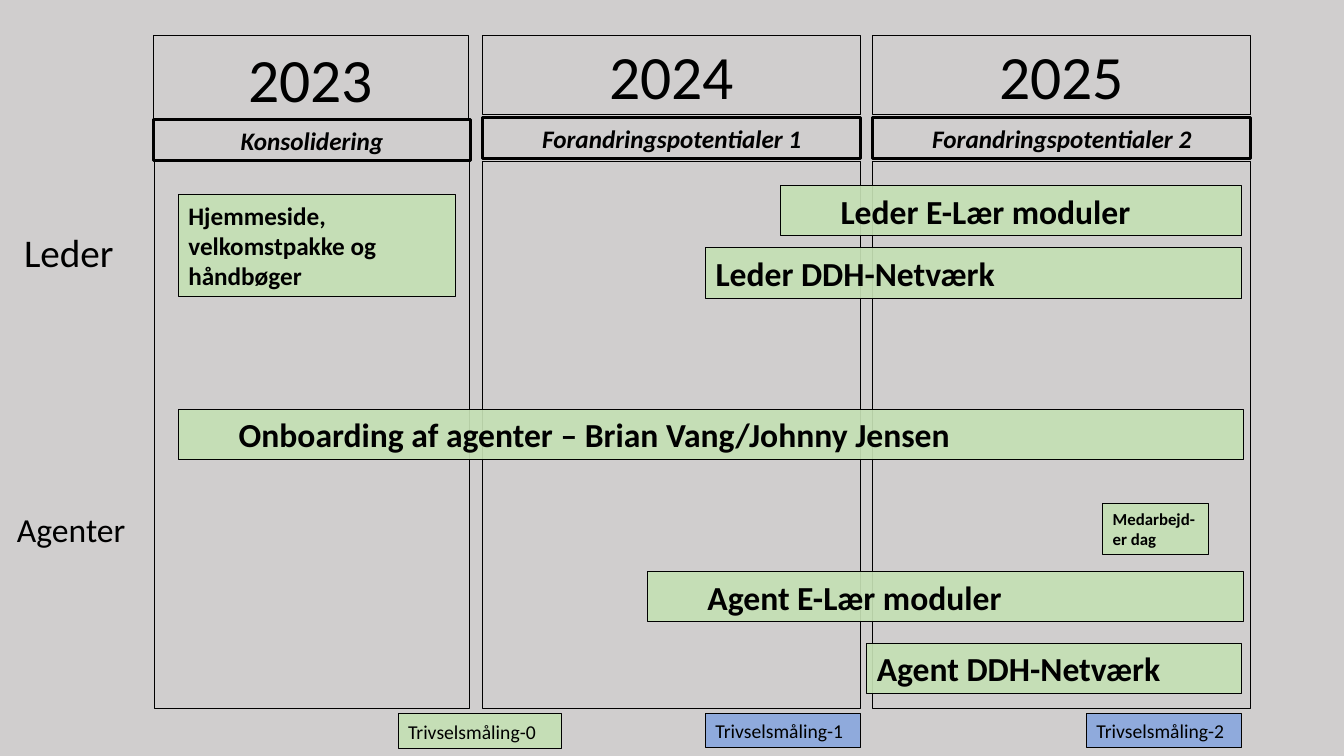
"""Draw a three-year plan for leaders and agents on a 160 by 90 grid."""
from dataclasses import dataclass
from typing import Optional

from lxml import etree
from pptx import Presentation
from pptx import util as u
from pptx.dml.color import RGBColor
from pptx.enum import shapes, text
from pptx.oxml import ns

COLS, ROWS = 160, 90
CELL = u.Inches(1 / 12)
BLACK = RGBColor(0x00, 0x00, 0x00)
GREY = RGBColor(0xD0, 0xCE, 0xCE)
GREEN = RGBColor(0xC5, 0xE0, 0xB4)
BLUE = RGBColor(0x8F, 0xAA, 0xDC)
OPAQUE = {GREEN: 92}
FONT = "Calibri"
BODY_TOP, BODY_ROWS = 19.2, 65.16
STRIP_ROWS = 4.8
BAR_ROWS = 6
FOOT_TOP = 84.96


@dataclass
class Year:
    name: str
    theme: str
    col: float
    wide: float
    head: float
    strip: float
    strip_wide: float
    body_col: float


@dataclass
class Bar:
    words: str
    col: float
    row: float
    wide: float
    high: float = BAR_ROWS
    size: int = 24
    bold: bool = True
    level: int = 0
    fill: RGBColor = GREEN


@dataclass
class Label:
    words: str
    col: float
    row: float
    wide: float
    high: float
    size: int
    wrap: bool


YEARS = [
    Year("2023", "Konsolidering", 18.24, 37.56, 10.08, 14.28, 37.8, 18.36),
    Year("2024", "Forandringspotentialer 1", 57.48, 45, 9.48, 14.04, 45, 57.48),
    Year("2025", "Forandringspotentialer 2", 103.92, 45, 9.48, 14.04, 45, 103.92),
]
BARS = [
    Bar("Hjemmeside, velkomstpakke og håndbøger", 21.24, 23.16, 33, 12.12, size=18),
    Bar("Leder E-Lær moduler", 92.88, 22.08, 54.96, level=1),
    Bar("Leder DDH-Netværk", 84, 29.52, 63.84),
    Bar("Onboarding af agenter – Brian Vang/Johnny Jensen", 21.24, 48.72, 126.84, level=1),
    Bar("Medarbejd-er dag", 131.28, 60, 12.6, size=12),
    Bar("Agent E-Lær moduler", 77.04, 68.04, 71.04, level=1),
    Bar("Agent DDH-Netværk", 103.2, 76.56, 44.64),
    Bar("Trivselsmåling-0", 47.4, FOOT_TOP, 19.44, 4.2, 14, False),
    Bar("Trivselsmåling-1", 84, FOOT_TOP, 18.48, 4.08, 14, False, fill=BLUE),
    Bar("Trivselsmåling-2", 129.36, FOOT_TOP, 18.48, 4.08, 14, False, fill=BLUE),
]
LABELS = [
    Label("Leder", 1.68, 26.64, 13.2, 6.84, 28, False),
    Label("Agenter", 0.84, 60, 16.56, 6, 24, True),
]


def place(*cells: float) -> list[int]:
    return [round(cell * CELL) for cell in cells]


def box(slide, area: list[int], line: float = 0.75, fill: Optional[RGBColor] = None):
    shape = slide.shapes.add_shape(shapes.MSO_SHAPE.RECTANGLE, *area)
    shape.shadow.inherit = False
    shape.line.color.rgb = BLACK
    shape.line.width = u.Pt(line)
    if fill is None:
        shape.fill.background()
        return shape
    shape.fill.solid()
    shape.fill.fore_color.rgb = fill
    if fill in OPAQUE:
        tint = shape.fill._xPr.find(".//" + ns.qn("a:srgbClr"))
        etree.SubElement(tint, ns.qn("a:alpha")).set("val", str(OPAQUE[fill] * 1000))
    return shape


def write(shape, words: str, size: int, bold: bool = False, slant: bool = False,
          align=text.PP_ALIGN.LEFT, level: int = 0, wrap: bool = True) -> None:
    frame = shape.text_frame
    frame.word_wrap = wrap
    frame.auto_size = text.MSO_AUTO_SIZE.SHAPE_TO_FIT_TEXT
    para = frame.paragraphs[0]
    para.text = words
    para.alignment = align
    if level:
        para.level = level
        para._p.get_or_add_pPr().set("marL", str(u.Inches(level / 2)))
    font = para.font
    font.name, font.size = FONT, u.Pt(size)
    font.bold, font.italic = bold, slant
    font.color.rgb = BLACK


def draw_year(slide, year: Year) -> None:
    mid = text.PP_ALIGN.CENTER
    box(slide, place(year.body_col, BODY_TOP, year.wide, BODY_ROWS))
    head = box(slide, place(year.col, 4.2, year.wide, year.head))
    write(head, year.name, 44, align=mid)
    strip = box(slide, place(year.col, year.strip, year.strip_wide, STRIP_ROWS), 2.25)
    write(strip, year.theme, 18, True, True, mid)


def draw_bar(slide, bar: Bar) -> None:
    shape = box(slide, place(bar.col, bar.row, bar.wide, bar.high), fill=bar.fill)
    write(shape, bar.words, bar.size, bar.bold, level=bar.level)


def draw_label(slide, label: Label) -> None:
    area = place(label.col, label.row, label.wide, label.high)
    write(slide.shapes.add_textbox(*area), label.words, label.size, wrap=label.wrap)


def main() -> None:
    deck = Presentation()
    deck.slide_width, deck.slide_height = place(COLS, ROWS)
    slide = deck.slides.add_slide(deck.slide_layouts[6])
    slide.background.fill.solid()
    slide.background.fill.fore_color.rgb = GREY
    for year in YEARS:
        draw_year(slide, year)
    for bar in BARS:
        draw_bar(slide, bar)
    for label in LABELS:
        draw_label(slide, label)
    deck.save("out.pptx")


if __name__ == "__main__":
    main()
